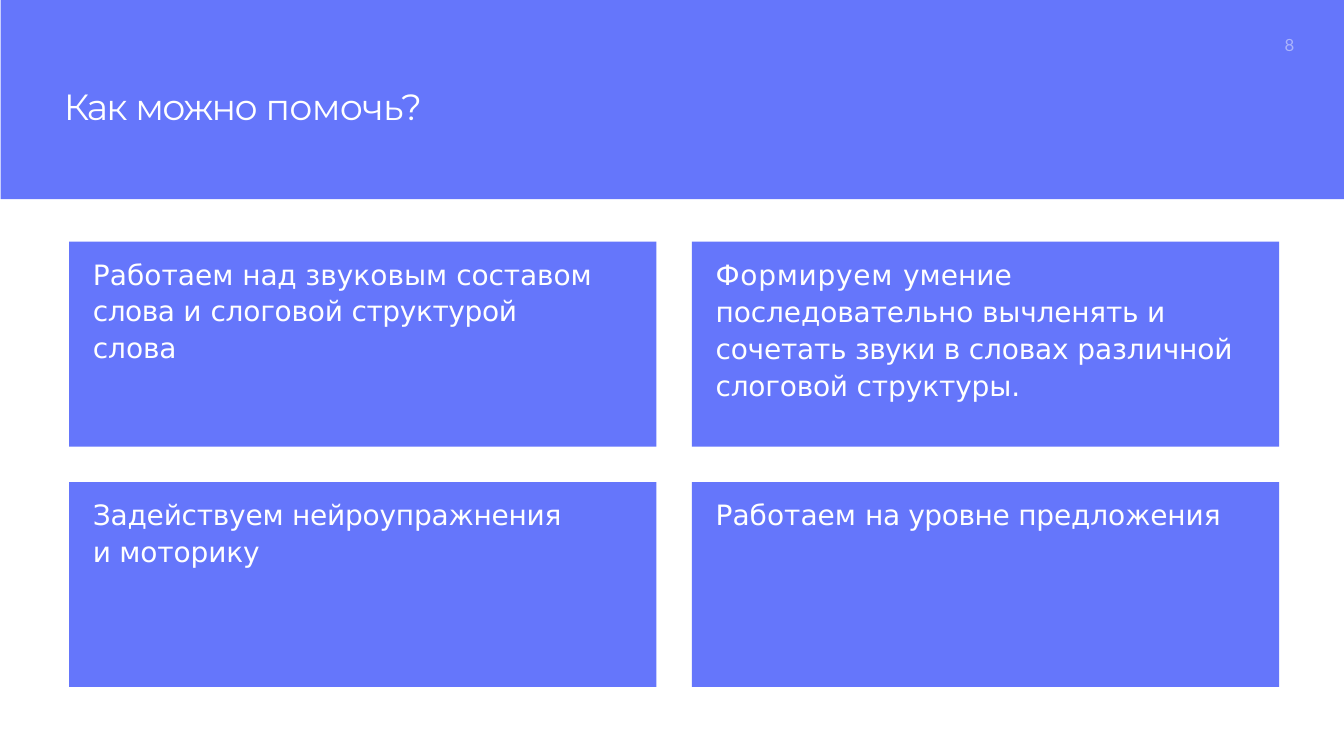
from pptx import Presentation
from pptx.dml.color import RGBColor
from pptx.enum.shapes import MSO_SHAPE
from pptx.enum.text import MSO_ANCHOR, MSO_AUTO_SIZE, PP_ALIGN
from pptx.util import Pt

COLORS = {"violet": "6576FB", "white": "FFFFFF", "pale": "ABB4FC"}


def write_text(shape, runs, *, font, size, color="white", top=0, before=1,
               line=None, left=1, right=0, wrap=True):
    """Fill a shape with one paragraph of (text, letter spacing) runs."""
    frame = shape.text_frame
    frame.word_wrap = wrap
    frame.auto_size = MSO_AUTO_SIZE.NONE
    frame.vertical_anchor = MSO_ANCHOR.TOP
    frame.margin_left = frame.margin_right = frame.margin_bottom = 0
    frame.margin_top = Pt(top)
    paragraph = frame.paragraphs[0]
    paragraph.alignment = PP_ALIGN.LEFT
    paragraph.space_before = Pt(before)
    if line:
        paragraph.line_spacing = line
    indents = paragraph._p.get_or_add_pPr()
    indents.set("marL", str(Pt(left)))
    indents.set("marR", str(Pt(right)))
    indents.set("indent", "0")
    for text, spacing in runs:
        run = paragraph.add_run()
        run.text = text
        run.font.name = font
        run.font.size = Pt(size)
        run.font.color.rgb = RGBColor.from_string(COLORS[color])
        run.font._element.set("spc", str(round(spacing * 100)))
        run.font._element.set("kern", "0")


class SlideBuilder:
    def __init__(self, slide, heading_font, body_font, number_font):
        self.slide = slide
        self.heading_font = heading_font
        self.body_font = body_font
        self.number_font = number_font

    def block(self, x, y, width, height):
        rectangle = self.slide.shapes.add_shape(
            MSO_SHAPE.RECTANGLE, Pt(x), Pt(y), Pt(width), Pt(height))
        rectangle.shadow.inherit = False
        rectangle.fill.solid()
        rectangle.fill.fore_color.rgb = RGBColor.from_string(COLORS["violet"])
        rectangle.line.fill.background()
        return rectangle

    def heading(self, runs, x, y, width, height):
        title = self.slide.shapes.title
        title.left, title.top = Pt(x), Pt(y)
        title.width, title.height = Pt(width), Pt(height)
        # Bring the heading in front of the band
        self.slide.shapes._spTree.append(title._element)
        write_text(title, runs, font=self.heading_font, size=26, top=5.4)

    def page_number(self, number, x, y, width, height):
        box = self.slide.shapes.add_textbox(Pt(x), Pt(y), Pt(width), Pt(height))
        write_text(box, [(number, -0.5)], font=self.number_font, size=12,
                   color="pale", top=1, wrap=False)

    def card(self, runs, x, y, width, height, **spacing):
        write_text(self.block(x, y, width, height), runs,
                   font=self.body_font, size=20, left=17, **spacing)


def main():
    presentation = Presentation()
    presentation.slide_width, presentation.slide_height = Pt(960), Pt(540)
    slide = presentation.slides.add_slide(presentation.slide_layouts[5])
    builder = SlideBuilder(slide, "Montserrat", "DejaVu Sans", "Lato")

    # Header band
    builder.block(0.5, 0, 959.5, 142.3)
    builder.page_number("8", 916.6, 23.8, 8.6, 16.6)
    builder.heading([("Как ", -1.3), ("можно ", -1.2), ("помочь?", -0.6)],
                    44.6, 54.7, 606, 78.5)

    # Ways to help, in reading order
    sound_structure = [
        ("Работаем ", 0), ("над ", -0.2), ("звуковым ", 0), ("составом ", -0.1),
        ("слова ", -0.4), ("и ", 0), ("слоговой ", -0.2),
        ("структурой ", -0.3), ("слова", -0.1)]
    sound_sequence = [
        ("Формируем ", 0.5), ("умение ", 0), ("последовательно ", -0.1),
        ("вычленять ", -0.2), ("и ", 0), ("сочетать ", -0.2),
        ("звуки ", -0.5), ("в ", -0.3), ("словах различной ", -0.1),
        ("слоговой ", -0.2), ("структуры.", -0.1)]
    motor_skills = [("Задействуем нейроупражнения ", -0.2), ("и ", -0.5),
                    ("моторику", -0.1)]
    sentence_level = [("Работаем ", 0), ("на уровне ", -0.3),
                      ("предложения", -0.1)]
    cards = [
        (sound_structure, dict(top=9.5, before=9.5, line=1.08, right=40)),
        (sound_sequence, dict(top=9.1, before=9.1, line=1.1, right=22)),
        (motor_skills, dict(top=9.1, before=9.1, line=1.09, right=60)),
        (sentence_level, dict(top=11.2, before=11.2, right=22)),
    ]

    # Two by two grid with equal gaps
    width, height, gap = 419.5, 146.4, 25.3
    for index, (runs, spacing) in enumerate(cards):
        row, column = divmod(index, 2)
        builder.card(runs, 49.4 + column * (width + gap),
                     172.6 + row * (height + gap), width, height, **spacing)

    presentation.save("out.pptx")


if __name__ == "__main__":
    main()
